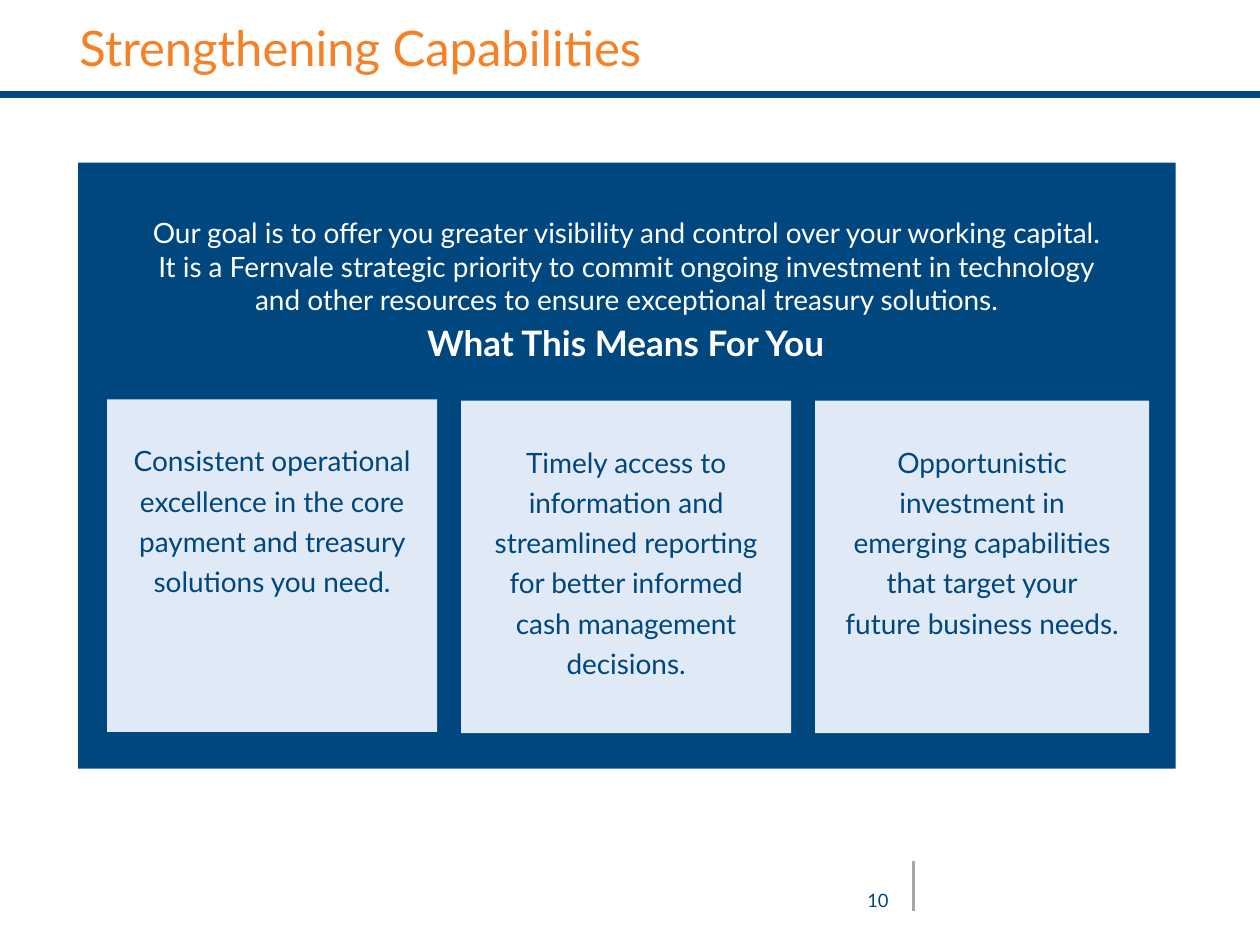
from dataclasses import dataclass

from lxml import etree
from pptx import Presentation
from pptx.dml.color import RGBColor
from pptx.enum.shapes import MSO_CONNECTOR, MSO_SHAPE
from pptx.enum.text import MSO_ANCHOR, MSO_AUTO_SIZE, PP_ALIGN
from pptx.oxml.ns import qn
from pptx.util import Inches, Pt

LINE, RECT = MSO_CONNECTOR.STRAIGHT, MSO_SHAPE.RECTANGLE
TOP, MIDDLE = MSO_ANCHOR.TOP, MSO_ANCHOR.MIDDLE
LEFT, CENTER, RIGHT = PP_ALIGN.LEFT, PP_ALIGN.CENTER, PP_ALIGN.RIGHT
NO_FIT = MSO_AUTO_SIZE.NONE
FONT = "Lato"
COLORS = {"navy": "00467F", "pale": "E0EAF7", "orange": "F58025",
          "gray": "A6A6A6", "white": "FFFFFF"}


@dataclass
class Rule:
    start: tuple[float, float]
    end: tuple[float, float]
    color: str
    width: float


@dataclass
class Text:
    lines: list[str]
    size: float
    color: str
    align: PP_ALIGN = CENTER
    anchor: MSO_ANCHOR = TOP
    inset: float = 0.05
    spacing: float = 1.0
    bold: bool = False


@dataclass
class Panel:
    box: tuple[float, float, float, float]
    fill: str
    text: Text


RULES = [
    Rule((0, 0.75), (10, 0.75), "navy", 4.5),
    Rule((7.25, 6.83), (7.25, 7.23), "gray", 1.25),
]
GOAL = Text([
    "Our goal is to offer you greater visibility and control over your working capital.\n"
    "It is a Fernvale strategic priority to commit ongoing investment in technology\n"
    "and other resources to ensure exceptional treasury solutions."
], 16, "white", inset=0.42)
CARDS = [
    ((0.85, 3.17, 2.62, 2.64),
     ["Consistent operational excellence in the core payment and treasury solutions you need."]),
    ((3.66, 3.18, 2.62, 2.64),
     ["Timely access to information and streamlined reporting\nfor better informed",
      "cash management decisions."]),
    ((6.47, 3.18, 2.65, 2.64),
     ["Opportunistic investment in\nemerging capabilities that target your\n"
      "future business needs."]),
]
PANELS = [Panel((0.62, 1.29, 8.71, 4.81), "navy", GOAL)] + [
    Panel(box, "pale", Text(lines, 16, "navy", inset=0.3, spacing=1.2))
    for box, lines in CARDS
]
LABELS = [
    ((2.56, 2.49, 4.81, 0.45),
     Text(["What This Means For You"], 20, "white", anchor=MIDDLE, bold=True)),
    ((6.65, 7.01, 0.5, 0.29), Text(["10"], 10.5, "navy", align=RIGHT)),
]


def rgb(name: str) -> RGBColor:
    return RGBColor.from_string(COLORS[name])


def write(shape, text: Text) -> None:
    frame = shape.text_frame
    form = {"word_wrap": True, "auto_size": NO_FIT, "vertical_anchor": text.anchor,
            "margin_left": Inches(0.1), "margin_right": Inches(0.1),
            "margin_top": Inches(text.inset), "margin_bottom": Inches(0.05)}
    for key, value in form.items():
        setattr(frame, key, value)
    style = {"name": FONT, "size": Pt(text.size), "bold": text.bold}
    for i, line in enumerate(text.lines):
        para = frame.add_paragraph() if i else frame.paragraphs[0]
        para.text = line
        para.alignment = text.align
        para.line_spacing = text.spacing
        para.space_before = Pt(0)
        for run in para.runs:
            for key, value in style.items():
                setattr(run.font, key, value)
            run.font.color.rgb = rgb(text.color)


def draw_rule(slide, rule: Rule) -> None:
    line = slide.shapes.add_connector(LINE, *map(Inches, rule.start + rule.end))
    line.line.color.rgb = rgb(rule.color)
    line.line.width = Pt(rule.width)
    etree.SubElement(line._element.spPr, qn("a:effectLst"))


def draw_panel(slide, panel: Panel) -> None:
    shape = slide.shapes.add_shape(RECT, *map(Inches, panel.box))
    shape.shadow.inherit = False
    shape.fill.solid()
    shape.fill.fore_color.rgb = rgb(panel.fill)
    shape.line.fill.background()
    write(shape, panel.text)


def draw_title(slide) -> None:
    title = slide.shapes.title
    place = {"left": 0.53, "top": 0, "width": 9, "height": 0.75}
    for key, value in place.items():
        setattr(title, key, Inches(value))
    write(title, Text(["Strengthening Capabilities"], 28, "orange", LEFT, MIDDLE))


def main() -> None:
    deck = Presentation()
    deck.slide_width, deck.slide_height = Inches(10), Inches(7.5)
    slide = deck.slides.add_slide(deck.slide_layouts[5])
    draw_title(slide)
    for rule in RULES:
        draw_rule(slide, rule)
    for panel in PANELS:
        draw_panel(slide, panel)
    for box, text in LABELS:
        write(slide.shapes.add_textbox(*map(Inches, box)), text)
    deck.save("out.pptx")


if __name__ == "__main__":
    main()
